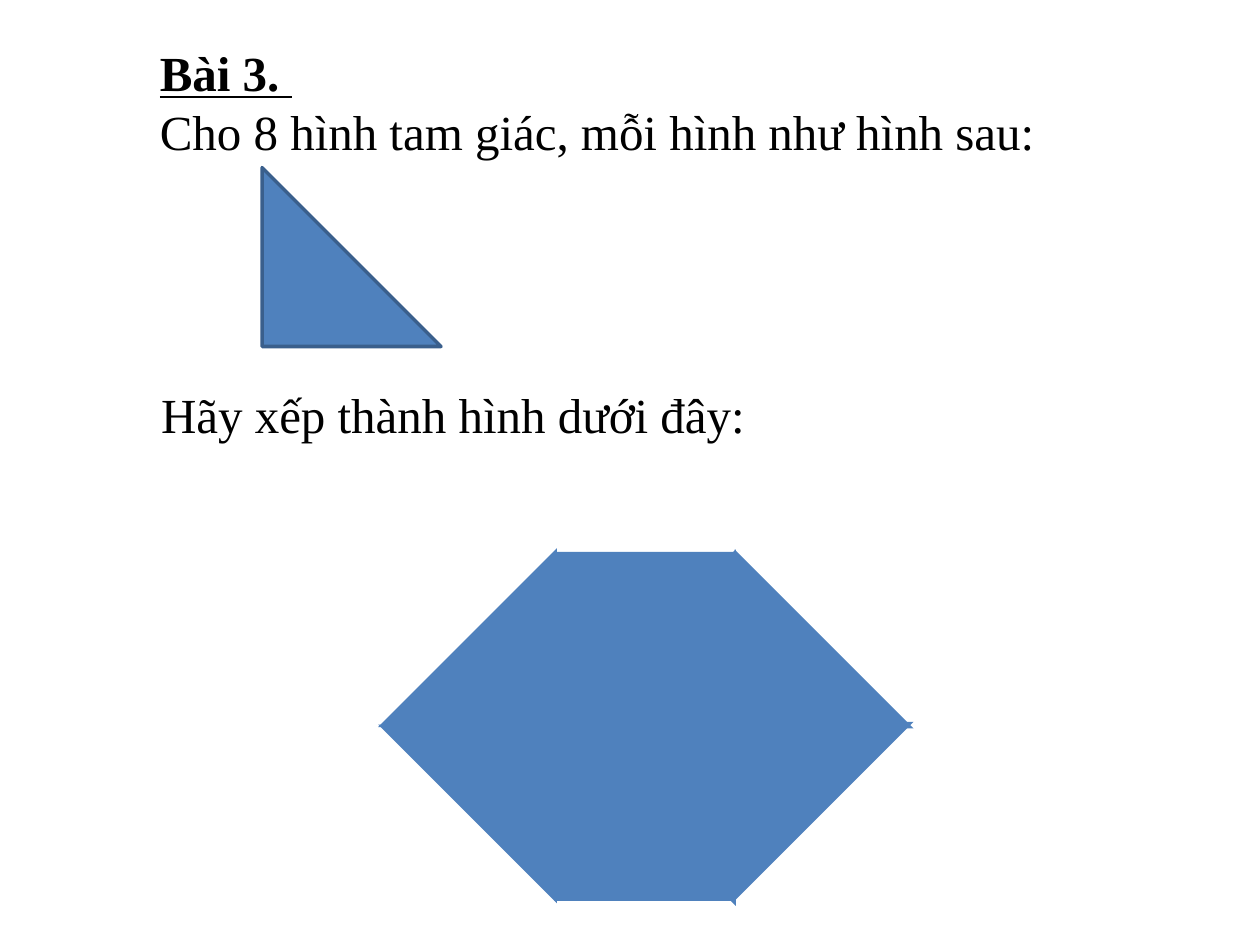
from typing import NamedTuple

from pptx import Presentation
from pptx.dml.color import RGBColor
from pptx.enum.shapes import MSO_SHAPE
from pptx.enum.text import MSO_AUTO_SIZE
from pptx.util import Pt

PX = 9144  # 100 px to the inch
SIDE = 142
BLUE = "4F81BD"
DARK_BLUE = "3A5F8C"
BLACK = "000000"


class Triangle(NamedTuple):
    left: int
    top: int
    rotation: int = 0


class TextBlock(NamedTuple):
    left: int
    top: int
    width: int
    height: int
    lines: list[str]


SAMPLE = Triangle(208, 133)
HEXAGON = [
    Triangle(583, 436),
    Triangle(442, 436, 270),
    Triangle(442, 438, 90),
    Triangle(300, 435, 270),
    Triangle(442, 577, 180),
    Triangle(440, 573),
    Triangle(583, 573, 90),
    Triangle(300, 575, 180),
]
TASK = TextBlock(117, 29, 775, 104, ["Bài 3. ", "Cho 8 hình tam giác, mỗi hình như hình sau:"])
REQUEST = TextBlock(118, 300, 775, 57, ["Hãy xếp thành hình dưới đây:"])


def colour(value: str) -> RGBColor:
    return RGBColor.from_string(value)


def add_triangle(shapes, triangle: Triangle, outlined: bool = False) -> None:
    shape = shapes.add_shape(MSO_SHAPE.RIGHT_TRIANGLE, triangle.left * PX,
                             triangle.top * PX, SIDE * PX, SIDE * PX)
    shape.rotation = triangle.rotation
    shape.shadow.inherit = False
    shape.fill.solid()
    shape.fill.fore_color.rgb = colour(BLUE)
    if outlined:
        shape.line.color.rgb = colour(DARK_BLUE)
        shape.line.width = Pt(2)
    else:
        shape.line.fill.background()


def add_text(shapes, block: TextBlock):
    box = shapes.add_textbox(block.left * PX, block.top * PX,
                             block.width * PX, block.height * PX)
    frame = box.text_frame
    frame.word_wrap = True
    frame.auto_size = MSO_AUTO_SIZE.SHAPE_TO_FIT_TEXT
    frame.text = "\n".join(block.lines)
    for para in frame.paragraphs:
        for span in para.runs:
            span.font.name = "Times New Roman"
            span.font.size = Pt(28)
            span.font.color.rgb = colour(BLACK)
    return box


def main() -> None:
    deck = Presentation()
    deck.slide_width, deck.slide_height = 1000 * PX, 750 * PX
    slide = deck.slides.add_slide(deck.slide_layouts[6])

    task = add_text(slide.shapes, TASK)
    heading = task.text_frame.paragraphs[0].runs[0]
    heading.font.bold = True
    heading.font.underline = True
    add_triangle(slide.shapes, SAMPLE, outlined=True)
    add_text(slide.shapes, REQUEST)

    hexagon = slide.shapes.add_group_shape()
    for triangle in HEXAGON:
        add_triangle(hexagon.shapes, triangle)

    deck.save("out.pptx")


if __name__ == "__main__":
    main()
